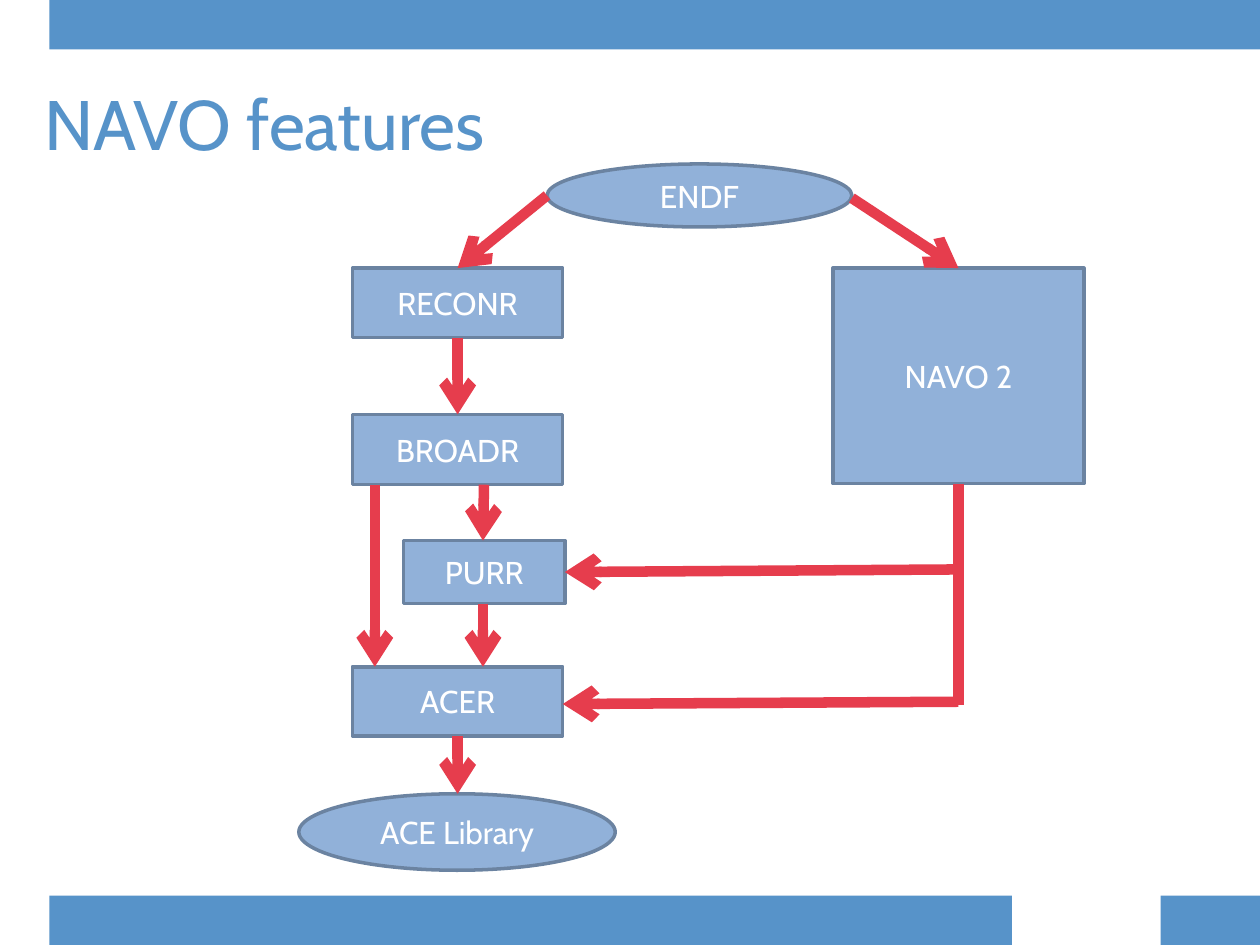
from lxml.etree import SubElement
from pptx import Presentation
from pptx.dml.color import RGBColor
from pptx.enum.shapes import MSO_CONNECTOR as Connector, MSO_SHAPE as Shape
from pptx.enum.text import MSO_ANCHOR as Anchor, PP_ALIGN as Align
from pptx.oxml.ns import qn
from pptx.util import Pt


def color(value):
    return RGBColor.from_string(value)


def write(frame, text, size=18, fill="FFFFFF", font="Cabin",
          align=Align.CENTER, anchor=Anchor.MIDDLE):
    frame.word_wrap = True
    frame.vertical_anchor = anchor
    paragraph = frame.paragraphs[0]
    paragraph.alignment = align
    run = paragraph.add_run()
    run.text = text
    run.font.name = font
    run.font.size = Pt(size)
    run.font.color.rgb = color(fill)


class FlowSlide:
    accent = "5793C9"
    node_fill = "91B1D9"
    node_line = "6B83A1"
    flow = "E63D4D"

    def __init__(self, deck):
        self.slide = deck.slides.add_slide(deck.slide_layouts[5])

    def title(self, text, left, top, width, height):
        title = self.slide.shapes.title
        title.left, title.top = Pt(left), Pt(top)
        title.width, title.height = Pt(width), Pt(height)
        title.text_frame.margin_left = Pt(5.8)
        write(title.text_frame, text, size=40, fill=self.accent,
              align=Align.LEFT, anchor=Anchor.TOP)

    def block(self, kind, fill, left, top, width, height):
        block = self.slide.shapes.add_shape(
            kind, Pt(left), Pt(top), Pt(width), Pt(height))
        block.shadow.inherit = False
        block.fill.solid()
        block.fill.fore_color.rgb = color(fill)
        return block

    def bar(self, left, top, width, height):
        self.block(Shape.RECTANGLE, self.accent, left, top, width, height).line.fill.background()

    def node(self, text, left, top, width, height, kind=Shape.RECTANGLE):
        node = self.block(kind, self.node_fill, left, top, width, height)
        node.line.color.rgb = color(self.node_line)
        node.line.width = Pt(2)
        write(node.text_frame, text)

    def link(self, start, end, arrow=True):
        link = self.slide.shapes.add_connector(
            Connector.STRAIGHT, *(Pt(length) for length in (*start, *end)))
        link.line.color.rgb = color(self.flow)
        link.line.width = Pt(6)
        if arrow:
            SubElement(link.line._get_or_add_ln(), qn("a:tailEnd"), type="arrow")
        SubElement(link._element.spPr, qn("a:effectLst"))


def main():
    deck = Presentation()
    deck.slide_width, deck.slide_height = Pt(720), Pt(540)
    page = FlowSlide(deck)

    page.bar(663.2, 511.8, 56.8, 28.2)
    page.bar(28.2, 511.8, 550, 28.2)
    page.bar(28.2, 0, 691.8, 28.2)
    page.title("NAVO features", 19.5, 42.5, 700.5, 68.4)

    left, width = 201.4, 120.2
    right = left + width
    center, purr_center, bypass, navo_center = 261.5, 276, 214.2, 547.7
    reconr_top, reconr_bottom = 153.2, 193
    broadr_top, broadr_bottom = 236.8, 277
    purr_top, purr_bottom, purr_right = 308.9, 345, 322.8
    acer_top, acer_bottom = 381, 420.5
    library_top = 453.6

    page.node("RECONR", left, reconr_top, width, reconr_bottom - reconr_top)
    page.node("BROADR", left, broadr_top, width, broadr_bottom - broadr_top)
    page.node("NAVO 2", 476, reconr_top, 143.4, 123.2)
    page.node("PURR", 230.6, purr_top, purr_right - 230.6, purr_bottom - purr_top)
    page.node("ENDF", 312.6, 93.7, 174.2, 36, Shape.OVAL)
    page.node("ACER", left, acer_top, width, acer_bottom - acer_top)
    page.node("ACE Library", 170.8, library_top, 180.8, 43.7, Shape.OVAL)

    page.link((navo_center, 325.4), (purr_right, 326.9))
    page.link((navo_center, 276.4), (navo_center, 402.6), arrow=False)
    page.link((navo_center, 401), (right, 402.3))
    page.link((center, reconr_bottom), (center, broadr_top))
    page.link((276.6, broadr_bottom), (purr_center, purr_top))
    page.link((bypass, broadr_bottom), (bypass, acer_top))
    page.link((center, acer_bottom), (center, library_top))
    page.link((312.6, 111.7), (center, reconr_top))
    page.link((486.8, 113.2), (navo_center, reconr_top))
    page.link((purr_center, purr_bottom), (purr_center, acer_top))

    deck.save("out.pptx")


if __name__ == "__main__":
    main()
